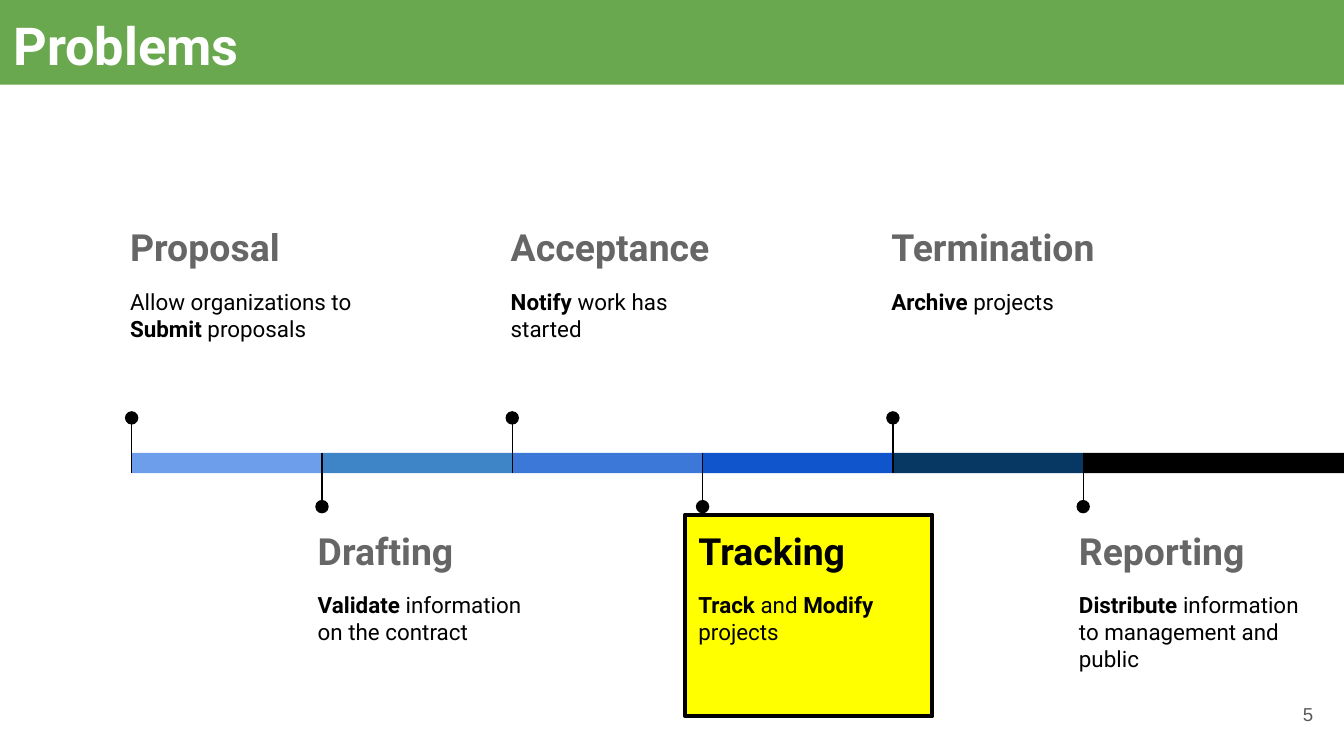
import dataclasses

import pptx
import pptx.dml.color
import pptx.enum.shapes
import pptx.enum.text
import pptx.oxml.ns
import pptx.util
from lxml import etree

Inches = pptx.util.Inches
Pt = pptx.util.Pt
Shape = pptx.enum.shapes.MSO_SHAPE
Align = pptx.enum.text.PP_ALIGN
Anchor = pptx.enum.text.MSO_ANCHOR


@dataclasses.dataclass(frozen=True)
class Theme:
    font: str = "Roboto"
    plain: str = "Arial"
    green: str = "6AA84F"
    white: str = "FFFFFF"
    black: str = "000000"
    gray: str = "666666"
    dim: str = "595959"
    yellow: str = "FFFF00"
    title: int = 28
    head: int = 20
    body: int = 12
    note: int = 10


THEME = Theme()
LEFT, LAST = 0.98, 8.06
BAR_TOP, BAR_TALL = 3.37, 0.15
DOT = 0.1

STAGES = [
    ("Proposal", "6D9EEB", 2.2,
     [("Allow organizations to ", False), ("Submit", True), (" proposals", False)]),
    ("Drafting", "3D85C6", 1.84,
     [("Validate ", True), ("information on the contract", False)]),
    ("Acceptance", "3C78D8", 1.84,
     [("Notify ", True), ("work has started", False)]),
    ("Tracking", "1155CC", 1.84,
     [("Track", True), (" and ", False), ("Modify ", True), ("projects", False)]),
    ("Termination", "073763", 1.84,
     [("Archive", True), (" projects", False)]),
    ("Reporting", THEME.black, 1.84,
     [("Distribute ", True), ("information to management and public", False)]),
]
STEP = (LAST - LEFT) / (len(STAGES) - 1)
FOCUS = "Tracking"


def rgb(code):
    return pptx.dml.color.RGBColor.from_string(code)


def paint(shape, code):
    shape.fill.solid()
    shape.fill.fore_color.rgb = rgb(code)


def add_run(para, text, size, color, bold=False, font=THEME.font):
    run = para.add_run()
    run.text = text
    run.font.name = font
    run.font.size = Pt(size)
    run.font.bold = bold
    run.font.color.rgb = rgb(color)


def set_frame(shape, anchor=Anchor.TOP):
    frame = shape.text_frame
    frame.word_wrap = True
    frame.auto_size = pptx.enum.text.MSO_AUTO_SIZE.NONE
    frame.vertical_anchor = anchor
    frame.margin_left = frame.margin_right = Inches(0.1)
    frame.margin_top = frame.margin_bottom = Inches(0.1)
    return frame


def add_block(slide, kind, x, y, wide, tall, color):
    block = slide.shapes.add_shape(
        kind, Inches(x), Inches(y), Inches(wide), Inches(tall))
    block.shadow.inherit = False
    paint(block, color)
    block.line.fill.background()
    return block


def add_box(slide, x, y, wide, tall):
    return slide.shapes.add_textbox(
        Inches(x), Inches(y), Inches(wide), Inches(tall))


def add_pin(slide, x, above):
    dot_y = 3.11 if above else 3.77
    end_y = BAR_TOP + BAR_TALL if above else BAR_TOP
    line = slide.shapes.add_connector(
        pptx.enum.shapes.MSO_CONNECTOR.STRAIGHT,
        Inches(x), Inches(dot_y), Inches(x), Inches(end_y))
    line.line.color.rgb = rgb(THEME.black)
    line.line.width = Pt(0.75)
    etree.SubElement(line._element.spPr, pptx.oxml.ns.qn("a:effectLst"))
    add_block(slide, Shape.OVAL, x - DOT / 2, dot_y - DOT / 2, DOT, DOT, THEME.black)


def add_label(slide, x, above, name, wide, parts):
    place = (x - 0.11, 1.57, wide, 1.24) if above else (x - 0.13, 3.83, wide, 1.5)
    if name == FOCUS:
        box = add_block(slide, Shape.RECTANGLE, *place, THEME.yellow)
        box.line.color.rgb = rgb(THEME.black)
        box.line.width = Pt(2.25)
        color = THEME.black
    else:
        box = add_box(slide, *place)
        color = THEME.gray
    frame = set_frame(box)
    head = frame.paragraphs[0]
    head.alignment = Align.LEFT
    add_run(head, name, THEME.head, color, True)
    body = frame.add_paragraph()
    body.alignment = Align.LEFT
    body.space_before = Pt(10)
    for text, bold in parts:
        add_run(body, text, THEME.body, THEME.black, bold)


def add_title(slide, text):
    title = slide.shapes.title
    title.left, title.top = Inches(0), Inches(0)
    title.width, title.height = Inches(10), Inches(0.63)
    paint(title, THEME.green)
    para = set_frame(title).paragraphs[0]
    para.alignment = Align.LEFT
    add_run(para, text, THEME.title, THEME.white, True)


def add_number(slide, text):
    box = add_box(slide, 9.27, 5.1, 0.6, 0.43)
    para = set_frame(box, Anchor.MIDDLE).paragraphs[0]
    para.alignment = Align.RIGHT
    add_run(para, text, THEME.note, THEME.dim, font=THEME.plain)


def main():
    deck = pptx.Presentation()
    deck.slide_width = Inches(10)
    deck.slide_height = Inches(10) * 9 // 16
    slide = deck.slides.add_slide(deck.slide_layouts[5])
    add_title(slide, "Problems")
    add_number(slide, "5")
    for i, (name, color, wide, parts) in enumerate(STAGES):
        x = LEFT + i * STEP
        above = i % 2 == 0
        span = 10 - x if i == len(STAGES) - 1 else STEP
        add_block(slide, Shape.RECTANGLE, x, BAR_TOP, span, BAR_TALL, color)
        add_pin(slide, x, above)
        add_label(slide, x, above, name, wide, parts)
    deck.save("out.pptx")


if __name__ == "__main__":
    main()
